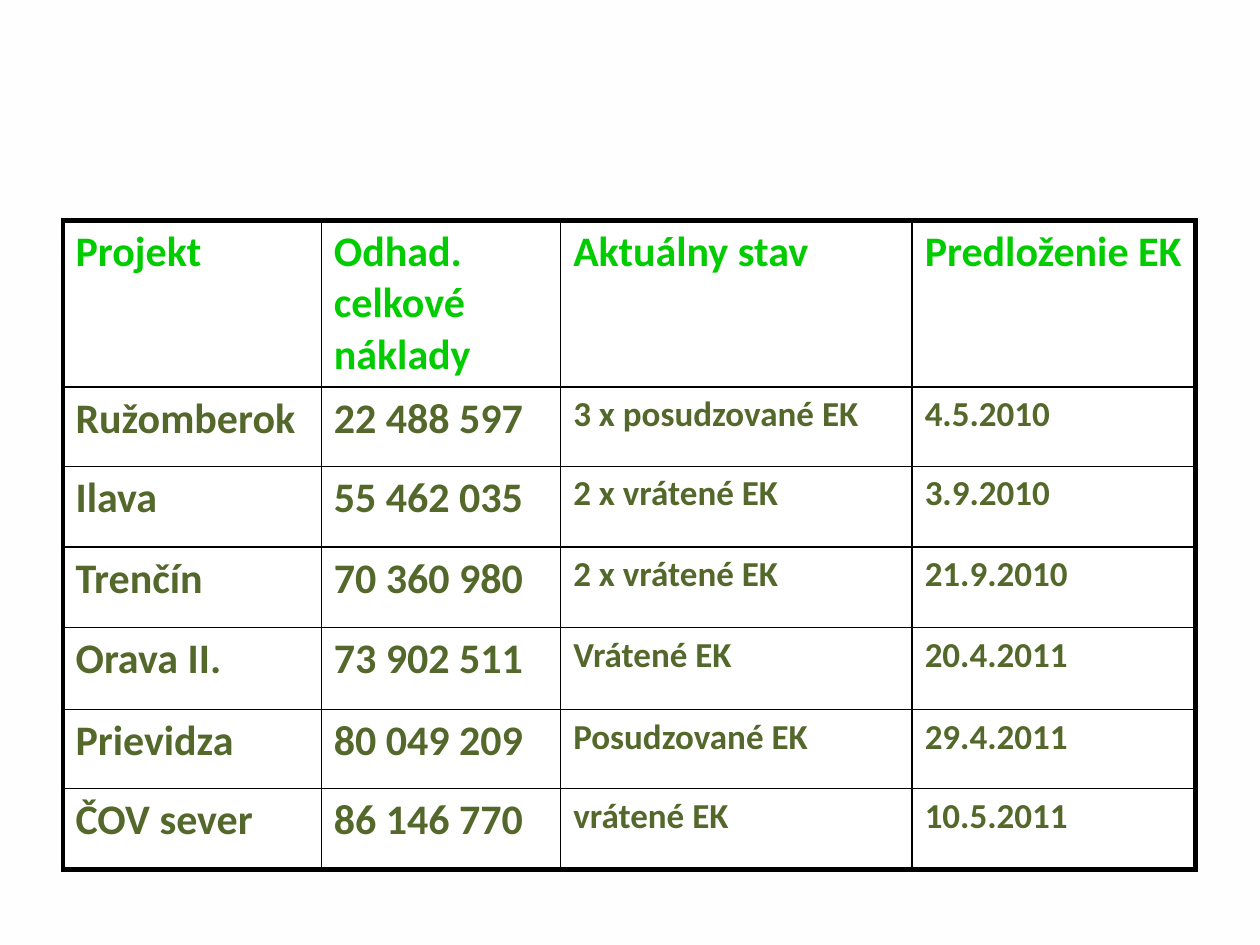
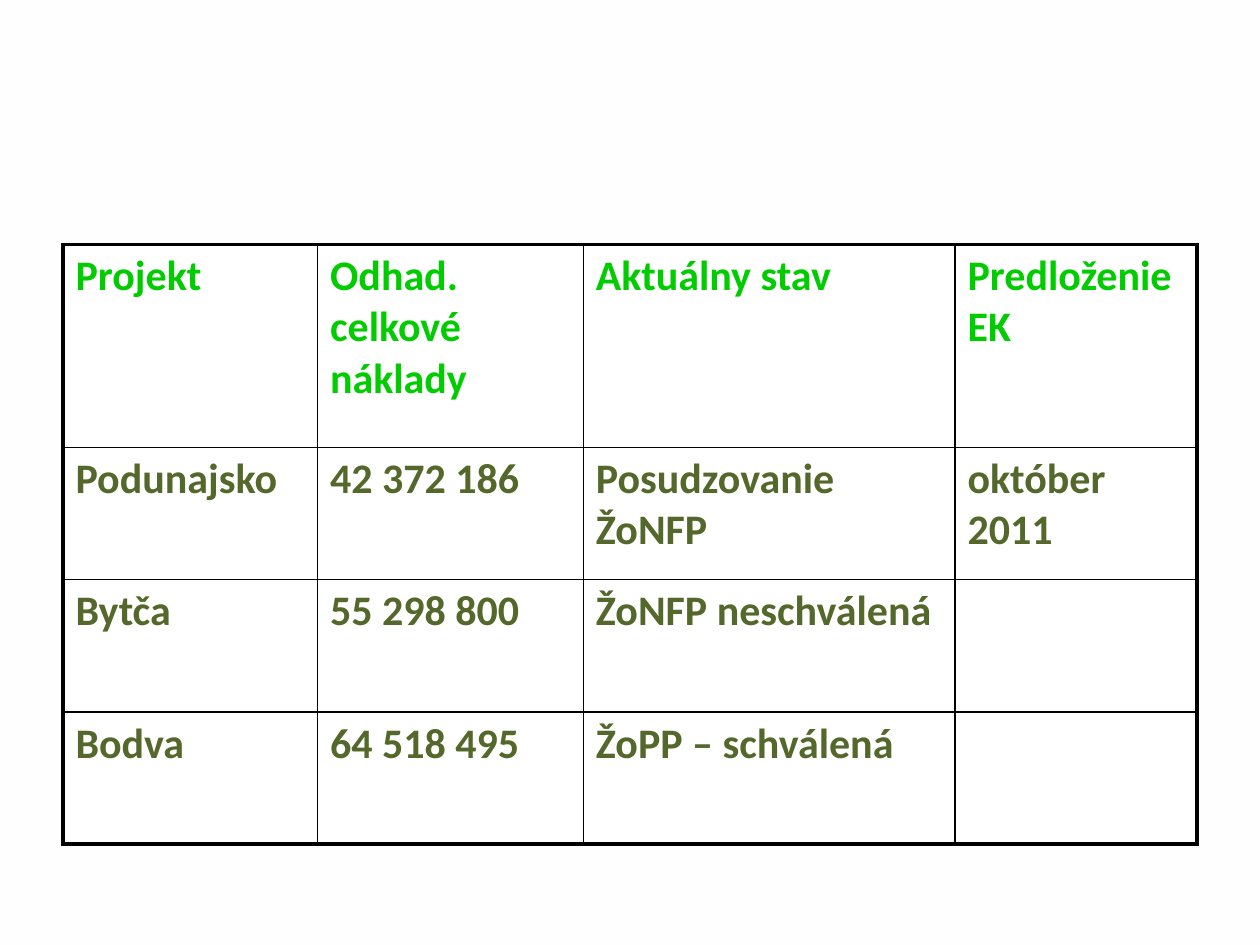
from lxml.etree import SubElement
from pptx import Presentation
from pptx.dml.color import RGBColor
from pptx.oxml.ns import qn
from pptx.util import Inches, Pt

HEADER_GREEN = RGBColor(0x00, 0xCC, 0x00)
BODY_GREEN = RGBColor(0x53, 0x68, 0x2A)
PALE_GREEN = RGBColor(0xEB, 0xF1, 0xDE)
WHITE = RGBColor(0xFF, 0xFF, 0xFF)
BLACK = RGBColor(0x00, 0x00, 0x00)
FONT = "Calibri"
INNER_BORDER = 1
HEADERS = ("Projekt", "Odhad. celkové náklady", "Aktuálny stav", "Predloženie EK")

# One entry per slide; sizes lists the body text size of each column
PROJECT_TABLES = [
    {
        "top": 1.75,
        "columns": (2.05, 1.9, 2.79, 2.25),
        "heights": (1.12, 0.63, 0.64, 0.64, 0.65, 0.63, 0.64),
        "outer_border": 3,
        "sizes": (24, 24, 20, 20),
        "projects": [
            ("Ružomberok", "22 488 597", "3 x posudzované EK", "4.5.2010"),
            ("Ilava", "55 462 035", "2 x vrátené EK", "3.9.2010"),
            ("Trenčín", "70 360 980", "2 x vrátené EK", "21.9.2010"),
            ("Orava II.", "73 902 511", "Vrátené EK", "20.4.2011"),
            ("Prievidza", "80 049 209", "Posudzované EK", "29.4.2011"),
            ("ČOV sever", "86 146 770", "vrátené EK", "10.5.2011"),
        ],
    },
    {
        "top": 1.94,
        "columns": (2.02, 2.11, 2.95, 1.92),
        "heights": (1.61, 1.05, 1.05, 1.05),
        "outer_border": 2.25,
        "sizes": (24, 24, 24, 24),
        "projects": [
            ("Podunajsko", "42 372 186", "Posudzovanie ŽoNFP", "október 2011"),
            ("Bytča", "55 298 800", "ŽoNFP neschválená", ""),
            ("Bodva", "64 518 495", "ŽoPP – schválená", ""),
        ],
    },
]


def set_border(cell, side, points):
    """Draw one side of a cell; side is L, R, T or B."""
    properties = cell._tc.get_or_add_tcPr()
    line = SubElement(properties, qn(f"a:ln{side}"), w=str(Pt(points)))
    fill = SubElement(line, qn("a:solidFill"))
    SubElement(fill, qn("a:srgbClr"), val=str(BLACK))


presentation = Presentation()
presentation.slide_width = Inches(10)
presentation.slide_height = Inches(7.5)
blank_layout = presentation.slide_layouts[6]

for content in PROJECT_TABLES:
    slide = presentation.slides.add_slide(blank_layout)

    # Almost transparent pale green background
    background = slide.background.fill
    background.solid()
    background.fore_color.rgb = PALE_GREEN
    color = slide.background._cSld.find(".//" + qn("a:srgbClr"))
    SubElement(color, qn("a:alpha"), val="6000")

    # Table grid
    rows = [HEADERS, *content["projects"]]
    last_row, last_column = len(rows) - 1, len(HEADERS) - 1
    table = slide.shapes.add_table(
        len(rows), len(HEADERS), Inches(0.5), Inches(content["top"]),
        Inches(sum(content["columns"])), Inches(sum(content["heights"])),
    ).table
    table.first_row = False
    table.horz_banding = False
    for column, width in zip(table.columns, content["columns"]):
        column.width = Inches(width)
    for row, height in zip(table.rows, content["heights"]):
        row.height = Inches(height)

    # Cells: heavy lines outside, thin lines inside
    for row_index, texts in enumerate(rows):
        for column_index, text in enumerate(texts):
            cell = table.cell(row_index, column_index)
            outer_sides = {
                "L": column_index == 0,
                "R": column_index == last_column,
                "T": row_index == 0,
                "B": row_index == last_row,
            }
            for side, is_outer in outer_sides.items():
                set_border(cell, side, content["outer_border"] if is_outer else INNER_BORDER)
            cell.fill.solid()
            cell.fill.fore_color.rgb = WHITE

            cell.text = text
            is_header = row_index == 0
            font = cell.text_frame.paragraphs[0].font
            font.name = FONT
            font.bold = True
            font.size = Pt(24 if is_header else content["sizes"][column_index])
            font.color.rgb = HEADER_GREEN if is_header else BODY_GREEN

presentation.save("out.pptx")
